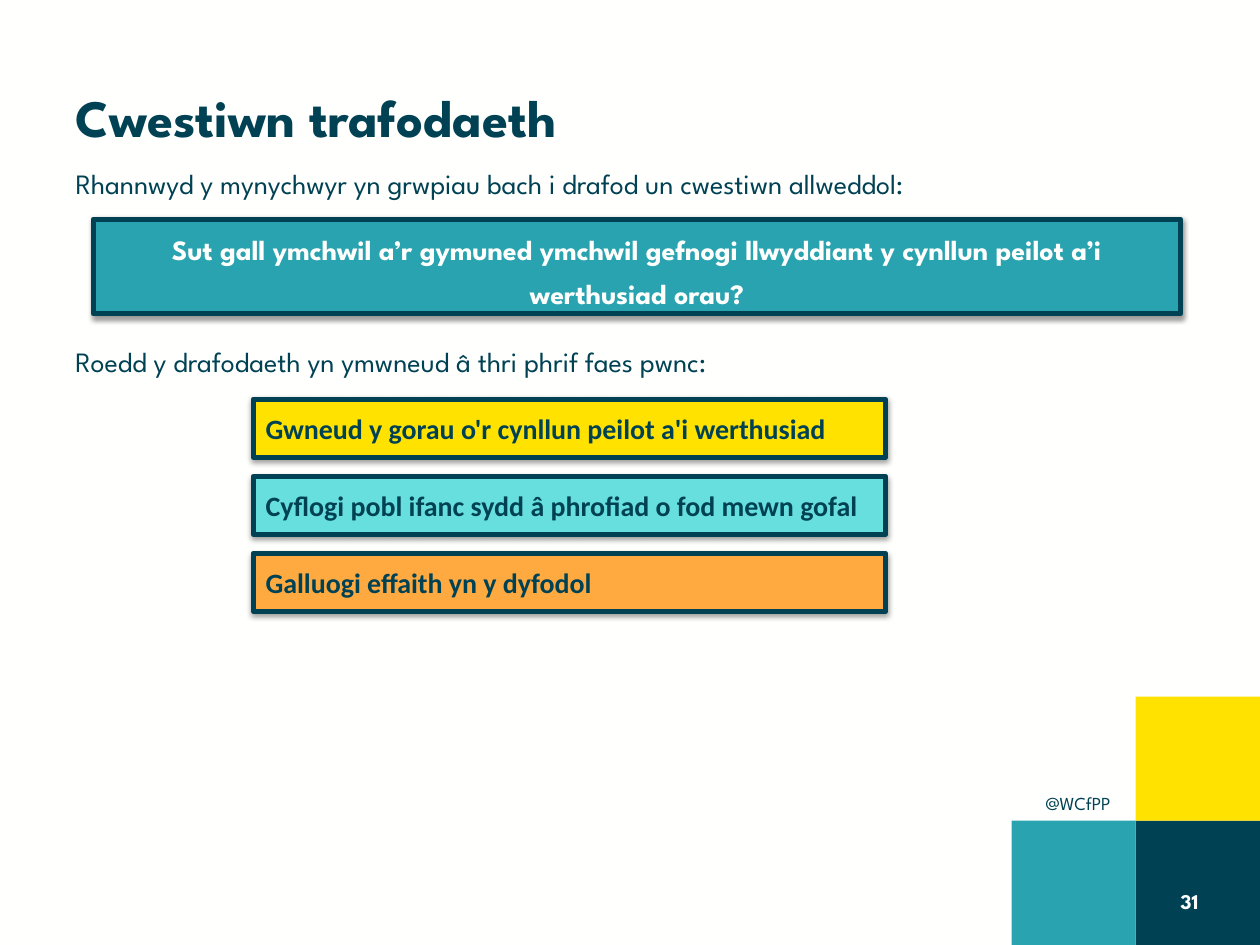
"""Build the discussion question slide with its three topic areas."""
from lxml import etree
from pptx import Presentation
from pptx import util as u
from pptx.dml.color import RGBColor
from pptx.enum import shapes, text
from pptx.oxml import parse_xml
from pptx.oxml.ns import nsdecls, qn

Pt = u.Pt
COLOURS = {"paper": "FFFFFE", "white": "FFFFFF", "navy": "004253", "teal": "29A3AF",
           "yellow": "FFE200", "aqua": "68DFDF", "orange": "FFAA41"}
SPARTAN, CALIBRI = "League Spartan", "Calibri"
LEFT, CENTRE, RIGHT, JUSTIFY = (text.PP_ALIGN.LEFT, text.PP_ALIGN.CENTER,
                                text.PP_ALIGN.RIGHT, text.PP_ALIGN.JUSTIFY)
MIDDLE, TOP = text.MSO_ANCHOR.MIDDLE, text.MSO_ANCHOR.TOP

HEADING = "Cwestiwn trafodaeth"
INTRO = "Rhannwyd y mynychwyr yn grwpiau bach i drafod un cwestiwn allweddol:"
QUESTION = ("Sut gall ymchwil a’r gymuned ymchwil gefnogi llwyddiant "
            "y cynllun peilot a’i werthusiad orau?")
TOPICS_INTRO = "Roedd y drafodaeth yn ymwneud â thri phrif faes pwnc:"
TOPICS = [
    ("Gwneud y gorau o'r cynllun peilot a'i werthusiad", "yellow"),
    ("Cyflogi pobl ifanc sydd â phrofiad o fod mewn gofal", "aqua"),
    ("Galluogi effaith yn y dyfodol", "orange"),
]
HANDLE, PAGE = "@WCfPP", "31"
SQUARES = [(1, 1, "navy"), (1, 2, "yellow"), (2, 1, "teal")]

WIDTH, HEIGHT = 720, 540
SQUARE = 71
MARGIN = 36
TOPIC_TOP, TOPIC_PITCH = 228.2, 44


def rgb(name):
    return RGBColor.from_string(COLOURS[name])


def place(item, left, top, width, height):
    item.left, item.top, item.width, item.height = map(Pt, (left, top, width, height))


def write(item, words, size, colour="navy", font=SPARTAN, bold=False, align=LEFT,
          anchor=MIDDLE, spacing=1.0, after=0, wrap=True):
    frame = item.text_frame
    frame.word_wrap = wrap
    frame.auto_size = text.MSO_AUTO_SIZE.NONE
    frame.vertical_anchor = anchor
    line = frame.paragraphs[0]
    line.alignment, line.line_spacing = align, spacing
    line.space_before, line.space_after = Pt(0), Pt(after)
    run = line.add_run()
    run.text = words
    run.font.name, run.font.size, run.font.bold = font, Pt(size), bold
    run.font.color.rgb = rgb(colour)


def add_block(slide, box, colour):
    block = slide.shapes.add_shape(shapes.MSO_SHAPE.RECTANGLE, *map(Pt, box))
    block.shadow.inherit = False
    block.fill.solid()
    block.fill.fore_color.rgb = rgb(colour)
    block.line.fill.background()
    return block


def add_card(slide, box, colour):
    card = add_block(slide, box, colour)
    card.line.color.rgb = rgb("navy")
    card.line.width = Pt(3)
    effects = card.element.spPr.find(qn("a:effectLst"))
    effects.append(parse_xml(
        f'<a:outerShdw {nsdecls("a")} blurRad="{Pt(3.1)}" dist="{Pt(1.6)}" '
        'dir="5400000" rotWithShape="0"><a:srgbClr val="000000">'
        '<a:alpha val="38000"/></a:srgbClr></a:outerShdw>'))
    return card


def add_label(slide, box, words, size, **style):
    write(slide.shapes.add_textbox(*map(Pt, box)), words, size, **style)


def main():
    deck = Presentation()
    deck.slide_width, deck.slide_height = Pt(WIDTH), Pt(HEIGHT)
    slide = deck.slides.add_slide(deck.slide_layouts[1])
    slide.background.fill.solid()
    slide.background.fill.fore_color.rgb = rgb("paper")

    for column, row, colour in SQUARES:
        add_block(slide, (WIDTH - column * SQUARE, HEIGHT - row * SQUARE, SQUARE, SQUARE), colour)
    add_label(slide, (590.4, 449.3, 58.3, 20.9), HANDLE, 10.5, anchor=TOP, wrap=False)

    heading = slide.shapes.title
    place(heading, MARGIN, 21.6, 648, 90)
    write(heading, HEADING, 30, bold=True)

    intro_style = {"align": JUSTIFY, "anchor": TOP, "spacing": 1.07, "after": 12}
    intro = slide.placeholders[1]
    place(intro, MARGIN, 90, 656, 360.7)
    properties = intro.text_frame.paragraphs[0]._p.get_or_add_pPr()
    properties.set("marL", "0")
    properties.set("indent", "0")
    etree.SubElement(properties, qn("a:buNone"))
    write(intro, INTRO, 16, **intro_style)

    add_label(slide, (649 - 124.8, 500.4, 167.8, 28.8), PAGE, 12,
              colour="white", bold=True, align=RIGHT)

    question = add_card(slide, (53.3, 125.3, 621.4, 54), "teal")
    write(question, QUESTION, 16, colour="paper", bold=True, align=CENTRE, spacing=1.3, after=3)

    add_label(slide, (MARGIN, 191.8, 666.7, 28), TOPICS_INTRO, 16, **intro_style)

    for index, (topic, colour) in enumerate(TOPICS):
        card = add_card(slide, (144.7, TOPIC_TOP + index * TOPIC_PITCH, 361.4, 33.1), colour)
        write(card, topic, 16, font=CALIBRI, bold=True)

    deck.save("out.pptx")


if __name__ == "__main__":
    main()
